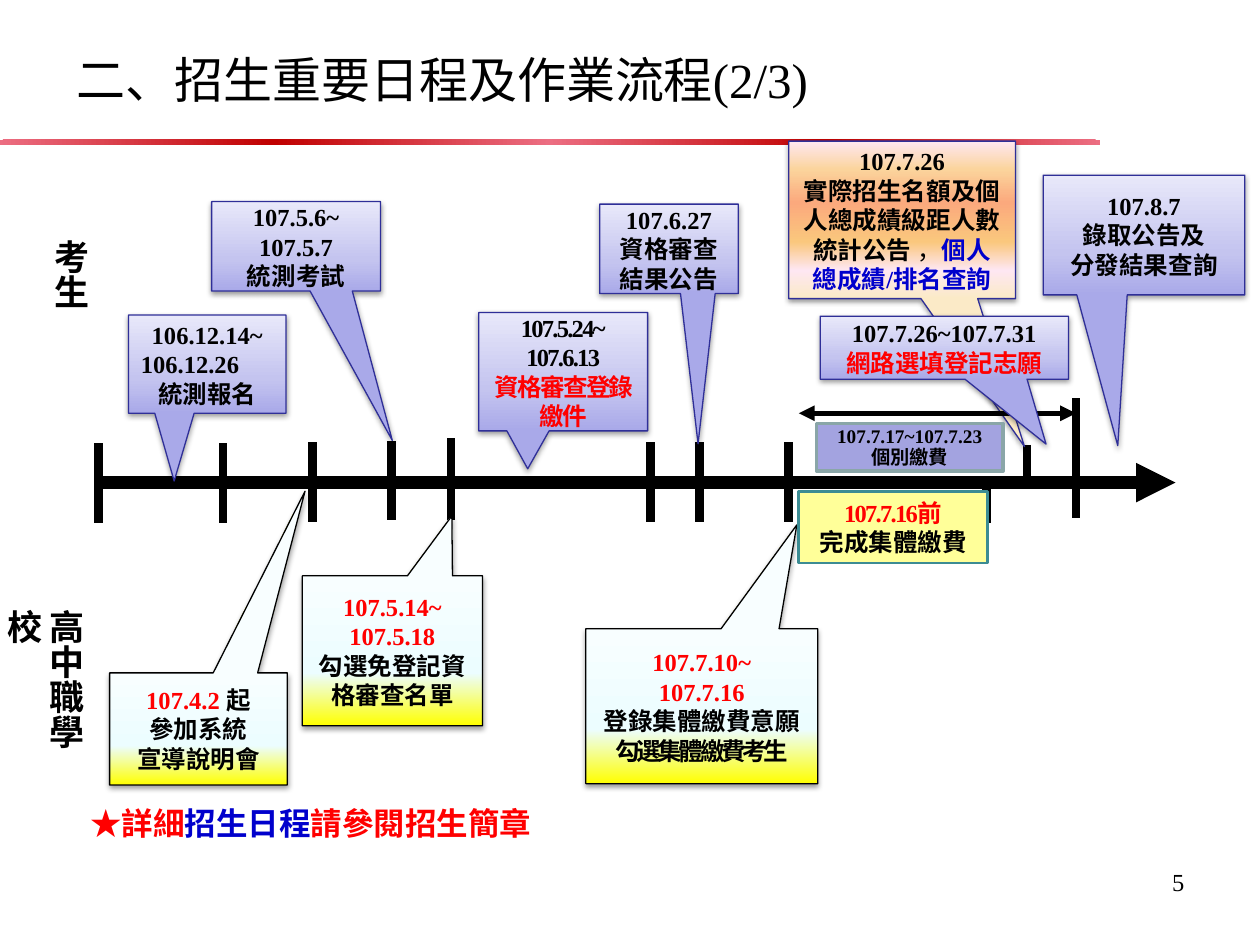
import pptx
import pptx.dml.color
import pptx.enum.shapes
import pptx.enum.text
import pptx.oxml
import pptx.oxml.ns
import pptx.util
from dataclasses import dataclass

RGB = pptx.dml.color.RGBColor
SHAPE = pptx.enum.shapes.MSO_SHAPE
ALIGN = pptx.enum.text.PP_ALIGN
ANCHOR = pptx.enum.text.MSO_ANCHOR
FIT = pptx.enum.text.MSO_AUTO_SIZE
qn = pptx.oxml.ns.qn

PX = 9144  # 100 px to the inch
LATIN, ASIAN = "Times New Roman", "Noto Sans CJK SC"

BLACK = RGB(0x00, 0x00, 0x00)
RED = RGB(0xFF, 0x00, 0x00)
BLUE = RGB(0x00, 0x00, 0xCC)
NAVY = RGB(0x2F, 0x2F, 0x98)
CREAM = RGB(0xFF, 0xFF, 0x99)
TEAL = RGB(0x3C, 0x8C, 0x93)
LILAC = RGB(0xA3, 0xA3, 0xE0)
GREY = RGB(0x8A, 0xA6, 0xA8)
PINK = RGB(0xEC, 0x6E, 0x82)
DARK = RGB(0xC0, 0x00, 0x00)

# Gradients as (percent, colour) stops
VIOLET = [(0, RGB(0xA9, 0xA9, 0xE9)), (35, RGB(0xC4, 0xC4, 0xEF)),
          (100, RGB(0xE8, 0xE8, 0xFA))]
YELLOW = [(0, RGB(0xFF, 0xFF, 0x00)), (35, RGB(0xEC, 0xFD, 0xFF)),
          (100, RGB(0xF8, 0xFE, 0xFF))]
SUNSET = [(0, RGB(0xFB, 0xEA, 0xC7)), (18, RGB(0xFE, 0xE7, 0xF2)),
          (36, RGB(0xFA, 0xC7, 0x7D)), (61, RGB(0xFB, 0xA9, 0x7D)),
          (82, RGB(0xFB, 0xD4, 0x9C)), (100, RGB(0xFE, 0xE7, 0xF2))]
RIBBON = [(0, PINK), (50, DARK), (100, PINK)]


@dataclass
class Run:
    text: str
    color: RGB = BLACK
    bold: bool = True
    track: int = 0  # letter spacing, points


@dataclass
class Line:
    runs: list
    align: ALIGN = ALIGN.CENTER


@dataclass
class Event:
    box: tuple
    tip: tuple  # callout point, as a share of the box size from its centre
    fill: list
    edge: RGB
    lines: list


def line(text: str, color: RGB = BLACK, track: int = 0, align=ALIGN.CENTER) -> Line:
    return Line([Run(text, color, True, track)], align)


def write(shape, lines, size=14, anchor=ANCHOR.MIDDLE, fit=FIT.NONE, pitch=None, vert=None):
    """Fill a shape with formatted lines."""
    frame = shape.text_frame
    frame.word_wrap = True
    frame.auto_size = fit
    frame.vertical_anchor = anchor
    if vert:
        frame._txBody.bodyPr.set("vert", vert)
    for i, item in enumerate(lines):
        para = frame.add_paragraph() if i else frame.paragraphs[0]
        para.alignment = item.align
        if pitch:
            para.line_spacing = pptx.util.Pt(pitch)
        for part in item.runs:
            run = para.add_run()
            run.text = part.text
            font = run.font
            font.size = pptx.util.Pt(size)
            font.bold = part.bold
            font.color.rgb = part.color
            font.name = LATIN
            props = run._r.get_or_add_rPr()
            pptx.oxml.ns  # east Asian face follows the Latin one
            asian = props.makeelement(qn("a:ea"), {"typeface": ASIAN})
            props.find(qn("a:latin")).addnext(asian)
            if part.track:
                props.set("spc", str(part.track * 100))


def xml(body: str):
    space = 'xmlns:a="http://schemas.openxmlformats.org/drawingml/2006/main"'
    return pptx.oxml.parse_xml(body.replace(">", f" {space}>", 1))


def blend(shape, stops: list, round_: bool = False):
    """Give a shape a gradient that runs upward, or out from its centre."""
    way = ('<a:path path="circle"><a:fillToRect l="50000" t="50000" r="50000" b="50000"/></a:path>'
           if round_ else '<a:lin ang="16200000" scaled="0"/>')
    marks = "".join(f'<a:gs pos="{pos * 1000}"><a:srgbClr val="{color}"/></a:gs>'
                    for pos, color in stops)
    grad = xml(f'<a:gradFill rotWithShape="1"><a:gsLst>{marks}</a:gsLst>{way}</a:gradFill>')
    shape._element.spPr.find(qn("a:prstGeom")).addnext(grad)


def block(slide, kind, box: tuple, fill=None, edge=None, width=0.75):
    shape = slide.shapes.add_shape(kind, *(n * PX for n in box))
    shape.shadow.inherit = False
    if fill is not None:
        shape.fill.solid()
        shape.fill.fore_color.rgb = fill
    if edge is None:
        shape.line.fill.background()
    else:
        shape.line.color.rgb = edge
        shape.line.width = pptx.util.Pt(width)
    return shape


def callout(slide, event: Event):
    shape = block(slide, SHAPE.RECTANGULAR_CALLOUT, event.box, edge=event.edge)
    for i, share in enumerate(event.tip):
        shape.adjustments[i] = share
    blend(shape, event.fill)
    shade = shape._element.spPr.find(qn("a:effectLst"))
    shade.append(xml('<a:outerShdw blurRad="40000" dist="20000" dir="5400000" rotWithShape="0">'
                     '<a:srgbClr val="000000"><a:alpha val="38000"/></a:srgbClr></a:outerShdw>'))
    write(shape, event.lines)


def stroke(slide, start: tuple, end: tuple, width: float, heads: tuple = ()):
    wire = slide.shapes.add_connector(pptx.enum.shapes.MSO_CONNECTOR.STRAIGHT,
                                      *(n * PX for n in start + end))
    wire.line.color.rgb = BLACK
    wire.line.width = pptx.util.Pt(width)
    for tag in heads:
        wire.line._get_or_add_ln().append(xml(f'<a:{tag} type="triangle"></a:{tag}>'))
    wire._element.spPr.append(xml("<a:effectLst></a:effectLst>"))


def label(slide, box: tuple, lines: list, **form):
    write(slide.shapes.add_textbox(*(n * PX for n in box)), lines, anchor=ANCHOR.TOP, **form)


TICKS = [(78, 352, 415), (177, 352, 415), (248, 351, 414), (311, 350, 413), (358, 348, 413),
         (516, 351, 414), (555, 351, 414), (626, 351, 414), (783, 385, 415), (815, 353, 384),
         (854, 316, 411)]

EVENTS = [
    Event((102, 250, 125, 78), (-0.21, 1.19), VIOLET, NAVY,
          [line("106.12.14~"), line("106.12.26", align=ALIGN.LEFT), line("統測報名")]),
    Event((87, 534, 141, 89), (0.6, -2.12), YELLOW, BLACK,
          [Line([Run("107.4.2 ", RED), Run("起")]), line("參加系統"), line("宣導說明會")]),
    Event((168, 160, 134, 71), (0.57, 2.17), VIOLET, NAVY,
          [line("107.5.6~"), line("107.5.7"), line("統測考試")]),
    Event((380, 248, 134, 94), (-0.21, 0.82), VIOLET, NAVY,
          [line("107.5.24~", track=-1), line("107.6.13", track=-1),
           line("資格審查登錄繳件", RED, -1)]),
    Event((476, 162, 110, 71), (0.21, 2.18), VIOLET, NAVY,
          [line("107.6.27"), line("資格審查"), line("結果公告")]),
    Event((465, 499, 184, 123), (0.41, -1.17), YELLOW, BLACK,
          [line("107.7.10~", RED), line("107.7.16", RED), line("登錄集體繳費意願"),
           line("勾選集體繳費考生", track=-2)]),
    Event((626, 112, 180, 125), (0.54, 1.44), SUNSET, NAVY,
          [line("107.7.26"),
           Line([Run("實際招生名額及個人總成績級距人數統計公告 "), Run("，", bold=False),
                 Run("個人總成績/排名查詢", BLUE)])]),
    Event((240, 457, 143, 119), (0.33, -0.9), YELLOW, BLACK,
          [line("107.5.14~", RED), line("107.5.18", RED), line("勾選免登記資格審查名單")]),
]
CHOICE = Event((651, 251, 197, 50), (0.41, 1.53), VIOLET, NAVY,
               [line("107.7.26~107.7.31"), line("網路選填登記志願", RED)])
RESULT = Event((828, 139, 160, 95), (-0.13, 1.76), VIOLET, NAVY,
               [line("107.8.7"), line("錄取公告及"), line("分發結果查詢")])


def main():
    deck = pptx.Presentation()
    deck.slide_width, deck.slide_height = 1000 * PX, 750 * PX
    slide = deck.slides.add_slide(deck.slide_layouts[5])

    # Title and ribbon
    blend(block(slide, SHAPE.RECTANGLE, (-1, 111, 874, 4)), RIBBON, True)
    title = slide.shapes.title
    title.left, title.top, title.width, title.height = (n * PX for n in (51, 28, 873, 69))
    write(title, [Line([Run("二、招生重要日程及作業流程(2/3)", bold=False)], ALIGN.LEFT)], size=28)

    # Time axis and its ticks
    stroke(slide, (78, 383), (933, 383), 7.5, ("tailEnd",))
    for x, top, foot in TICKS:
        stroke(slide, (x, top), (x, foot), 5)

    # Events, with the payment span under the last two
    for event in EVENTS:
        callout(slide, event)
    group = block(slide, SHAPE.RECTANGLE, (634, 390, 150, 57), CREAM, TEAL, 1.5)
    write(group, [line("107.7.16前", RED, -1), line("完成集體繳費")],
          anchor=ANCHOR.TOP, fit=FIT.SHAPE_TO_FIT_TEXT)
    stroke(slide, (634, 328), (854, 328), 3, ("headEnd", "tailEnd"))
    callout(slide, CHOICE)
    callout(slide, RESULT)
    single = block(slide, SHAPE.RECTANGLE, (648, 336, 148, 38), LILAC, GREY, 2)
    write(single, [line("107.7.17~107.7.23"), line("個別繳費")], size=11, pitch=12)

    # Row names, note and page number
    grow = FIT.SHAPE_TO_FIT_TEXT
    label(slide, (24, 180, 54, 102), [line("考生", align=ALIGN.JUSTIFY)],
          size=20, fit=grow, vert="eaVert")
    label(slide, (20, 474, 54, 158), [line("高中職學校", align=ALIGN.LEFT)],
          size=20, fit=grow, vert="eaVert")
    label(slide, (62, 633, 390, 40),
          [Line([Run("★詳細", RED), Run("招生日程", BLUE), Run("請參閱招生簡章", RED)], ALIGN.LEFT)],
          size=18, fit=grow)
    label(slide, (717, 683, 233, 52), [Line([Run("5", bold=False)], ALIGN.RIGHT)])

    deck.save("out.pptx")


if __name__ == "__main__":
    main()
